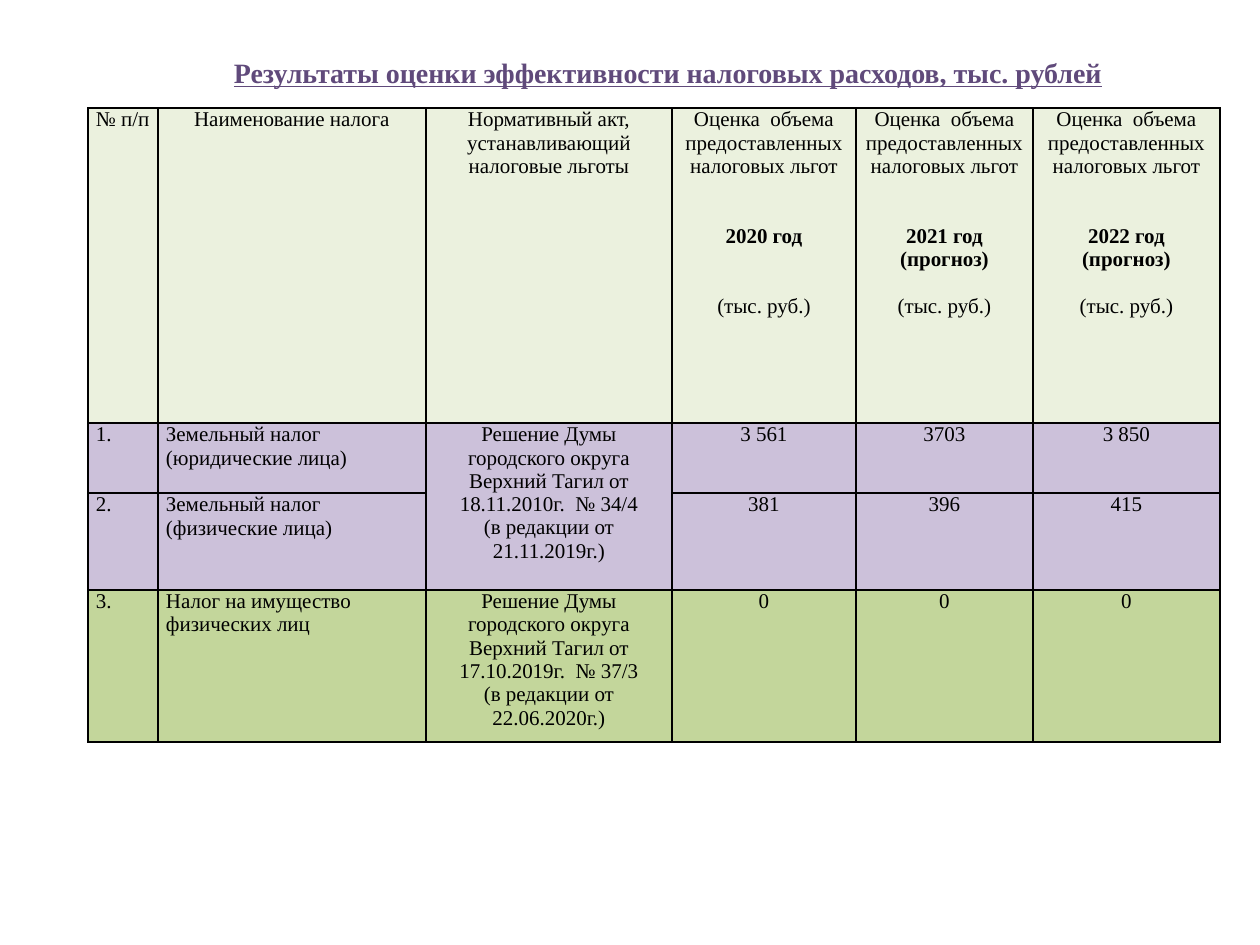
from dataclasses import dataclass

from lxml import etree
from pptx import Presentation
from pptx import util as u
from pptx.dml import color
from pptx.enum import text
from pptx.oxml import ns

LEFT, MID = text.PP_ALIGN.LEFT, text.PP_ALIGN.CENTER


@dataclass
class Theme:
    font: str = "Times New Roman"
    ink: str = "000000"
    title: str = "604A7B"
    head: str = "EBF1DE"
    land: str = "CCC1DA"
    estate: str = "C3D69B"
    big: int = 16
    small: int = 12
    line: float = 13.3  # height of one table line, in points


def px(n):
    return u.Emu(round(n * 914400 / 126))


class Deck:
    def __init__(self, theme):
        self.theme = theme
        self.prs = Presentation()
        self.prs.slide_width, self.prs.slide_height = px(1260), px(945)
        self.slide = self.prs.slides.add_slide(self.prs.slide_layouts[6])

    def style(self, par, size, tint, bold=False, line=False):
        for run in par.runs:
            font = run.font
            font.name, font.size = self.theme.font, u.Pt(size)
            font.bold, font.underline = bold, line
            font.color.rgb = color.RGBColor.from_string(tint)

    def title(self, words, x, y, w, h):
        frame = self.slide.shapes.add_textbox(px(x), px(y), px(w), px(h)).text_frame
        frame.word_wrap = False
        frame.text = words
        par = frame.paragraphs[0]
        par.alignment = MID
        self.style(par, self.theme.big, self.theme.title, bold=True, line=True)

    def edge(self, cell):
        props = cell._tc.get_or_add_tcPr()
        for side in ("lnL", "lnR", "lnT", "lnB"):
            rule = etree.SubElement(props, ns.qn("a:" + side), w=str(u.Pt(1)))
            fill = etree.SubElement(rule, ns.qn("a:solidFill"))
            etree.SubElement(fill, ns.qn("a:srgbClr"), val=self.theme.ink)

    def cell(self, cell, lines, tint, align):
        """Each line is (words, bold, blank lines before it)."""
        cell.margin_left = cell.margin_right = px(8)
        cell.margin_top = cell.margin_bottom = 0
        self.edge(cell)
        cell.fill.solid()
        cell.fill.fore_color.rgb = color.RGBColor.from_string(tint)
        cell.text_frame.text = "\n".join(words for words, _, _ in lines)
        for par, (_, bold, gap) in zip(cell.text_frame.paragraphs, lines):
            par.alignment = align
            if gap:
                par.space_before = u.Pt(gap * self.theme.line)
            self.style(par, self.theme.small, self.theme.ink, bold)

    def table(self, x, y, cols, rows):
        """Each row is (height, fill, cells)."""
        high = [row[0] for row in rows]
        grid = self.slide.shapes.add_table(
            len(rows), len(cols), px(x), px(y), px(sum(cols)), px(sum(high))).table
        for col, wide in zip(grid.columns, cols):
            col.width = px(wide)
        for r, (tall, tint, cells) in enumerate(rows):
            grid.rows[r].height = px(tall)
            for c, lines in enumerate(cells):
                align = LEFT if c == 0 or (c == 1 and r) else MID
                self.cell(grid.cell(r, c), lines, tint, align)
        return grid


def plain(*words):
    return [(word, False, 0) for word in words]


def year(num, guess=True):
    lines = [("Оценка  объема предоставленных налоговых льгот", False, 0),
             (f"{num} год", True, 2)]
    if guess:
        lines.append(("(прогноз)", True, 0))
    return lines + [("(тыс. руб.)", False, 1 if guess else 2)]


def act(date, num, edit):
    return plain(f"Решение Думы городского округа Верхний Тагил от {date}г.  № {num}",
                 f"(в редакции от {edit}г.)")


def tax(num, name, rule, *sums):
    return [plain(num), plain(name), rule, *map(plain, sums)]


def main():
    theme = Theme()
    deck = Deck(theme)

    # Title
    deck.title("Результаты оценки эффективности налоговых расходов, тыс. рублей",
               217, 49, 902, 47)

    # Table of tax reliefs
    head = [plain("№ п/п"), plain("Наименование налога"),
            plain("Нормативный акт, устанавливающий налоговые льготы"),
            year(2020, guess=False), year(2021), year(2022)]
    grid = deck.table(88, 108, [70, 268, 246, 184, 177, 187], [
        (315, theme.head, head),
        (70, theme.land, tax("1.", "Земельный налог (юридические лица)",
                             act("18.11.2010", "34/4", "21.11.2019"),
                             "3 561", "3703", "3 850")),
        (97, theme.land, tax("2.", "Земельный налог (физические лица)", [],
                             "381", "396", "415")),
        (152, theme.estate, tax("3.", "Налог на имущество физических лиц",
                                act("17.10.2019", "37/3", "22.06.2020"),
                                "0", "0", "0")),
    ])

    # One act covers both land tax rows
    grid.cell(1, 2).merge(grid.cell(2, 2))

    deck.prs.save("out.pptx")


if __name__ == "__main__":
    main()
